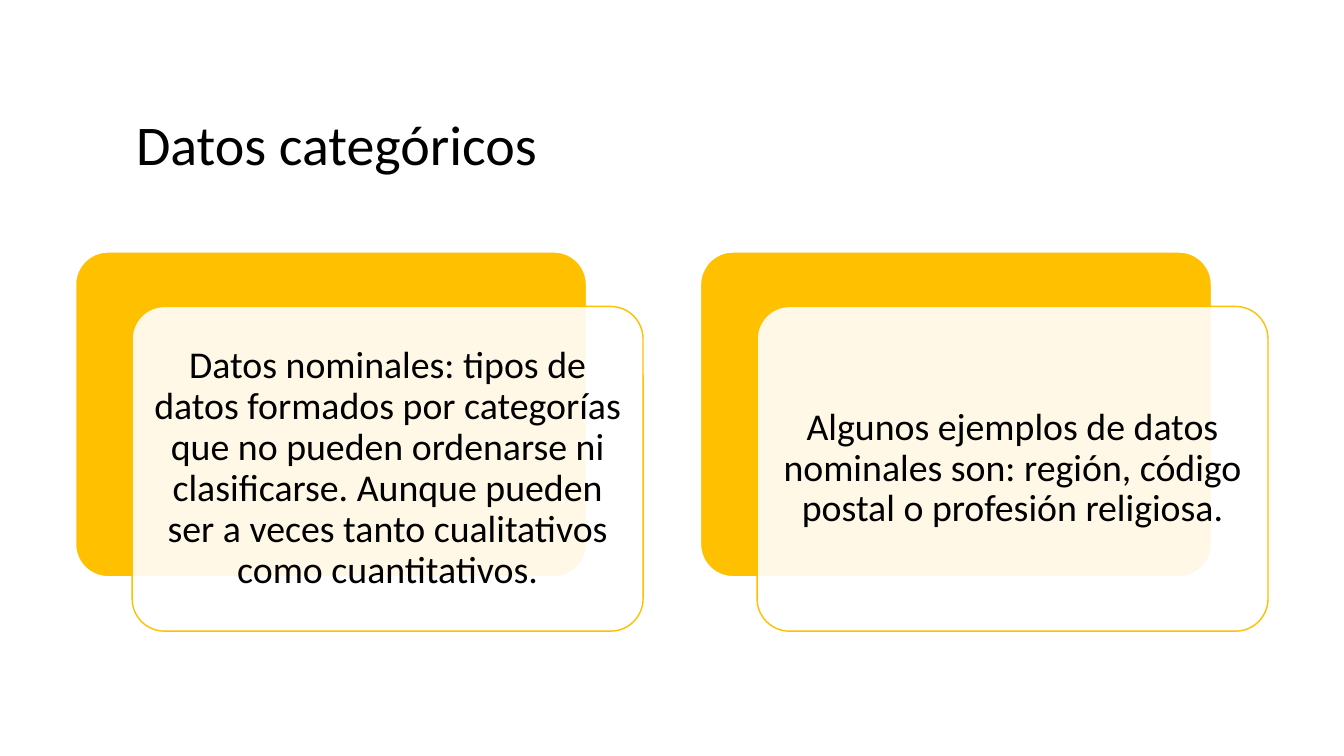
from lxml.etree import SubElement
from pptx import Presentation
from pptx.dml.color import RGBColor
from pptx.enum.shapes import MSO_SHAPE as Shape
from pptx.enum.text import MSO_ANCHOR as Anchor, MSO_AUTO_SIZE as AutoSize, PP_ALIGN as Align
from pptx.oxml.ns import qn
from pptx.util import Pt

COLORS = {"gold": "FFC000", "white": "FFFFFF", "black": "000000"}
TITLE = "Datos categóricos"
CARDS = [
    "Datos nominales: tipos de datos formados por categorías que no pueden "
    "ordenarse ni clasificarse. Aunque pueden ser a veces tanto cualitativos "
    "como cuantitativos.",
    "Algunos ejemplos de datos nominales son: región, código postal o "
    "profesión religiosa.",
]
CARD_LEFT, CARD_TOP, CARD_PITCH = 54, 180, 446.4
CARD_WIDTH, CARD_HEIGHT = 365, 232
OFFSET_X, OFFSET_Y = 40.4, 38.9


def color(name):
    return RGBColor.from_string(COLORS[name])


def write(frame, text, *, size, font="Calibri", ink="black", align=Align.LEFT, inset=None):
    frame.word_wrap = True
    frame.auto_size = AutoSize.NONE
    frame.vertical_anchor = Anchor.MIDDLE
    if inset is not None:
        frame.margin_left = frame.margin_right = Pt(inset)
        frame.margin_top = frame.margin_bottom = Pt(inset)
    paragraph = frame.paragraphs[0]
    paragraph.alignment = align
    paragraph.line_spacing = 0.9
    run = paragraph.add_run()
    run.text = text
    run.font.name = font
    run.font.size = Pt(size)
    run.font.color.rgb = color(ink)


class SlideBuilder:
    def __init__(self, deck):
        self.slide = deck.slides.add_slide(deck.slide_layouts[5])

    def title(self, text):
        heading = self.slide.shapes.title
        heading.left, heading.top = Pt(90), Pt(78)
        heading.width, heading.height = Pt(780), Pt(54)
        write(heading.text_frame, text, size=40)

    def panel(self, left, top, fill, line, opacity=100):
        panel = self.slide.shapes.add_shape(
            Shape.ROUNDED_RECTANGLE, Pt(left), Pt(top), Pt(CARD_WIDTH), Pt(CARD_HEIGHT))
        panel.adjustments[0] = 0.1
        panel.shadow.inherit = False
        panel.fill.solid()
        panel.fill.fore_color.rgb = color(fill)
        panel.line.color.rgb = color(line)
        panel.line.width = Pt(1)
        if opacity < 100:
            fill_color = panel.fill._xPr.find(qn("a:solidFill"))[0]
            SubElement(fill_color, qn("a:alpha"), val=str(opacity * 1000))
        return panel

    def card(self, left, top, text):
        """Draw a gold panel with a translucent text panel shifted over it."""
        self.panel(left, top, "gold", "white")
        front = self.panel(left + OFFSET_X, top + OFFSET_Y, "white", "gold", opacity=90)
        write(front.text_frame, text, size=27, align=Align.CENTER, inset=8)


def main():
    deck = Presentation()
    deck.slide_width, deck.slide_height = Pt(960), Pt(540)
    builder = SlideBuilder(deck)
    builder.title(TITLE)
    for column, text in enumerate(CARDS):
        builder.card(CARD_LEFT + column * CARD_PITCH, CARD_TOP, text)
    deck.save("out.pptx")


if __name__ == "__main__":
    main()
